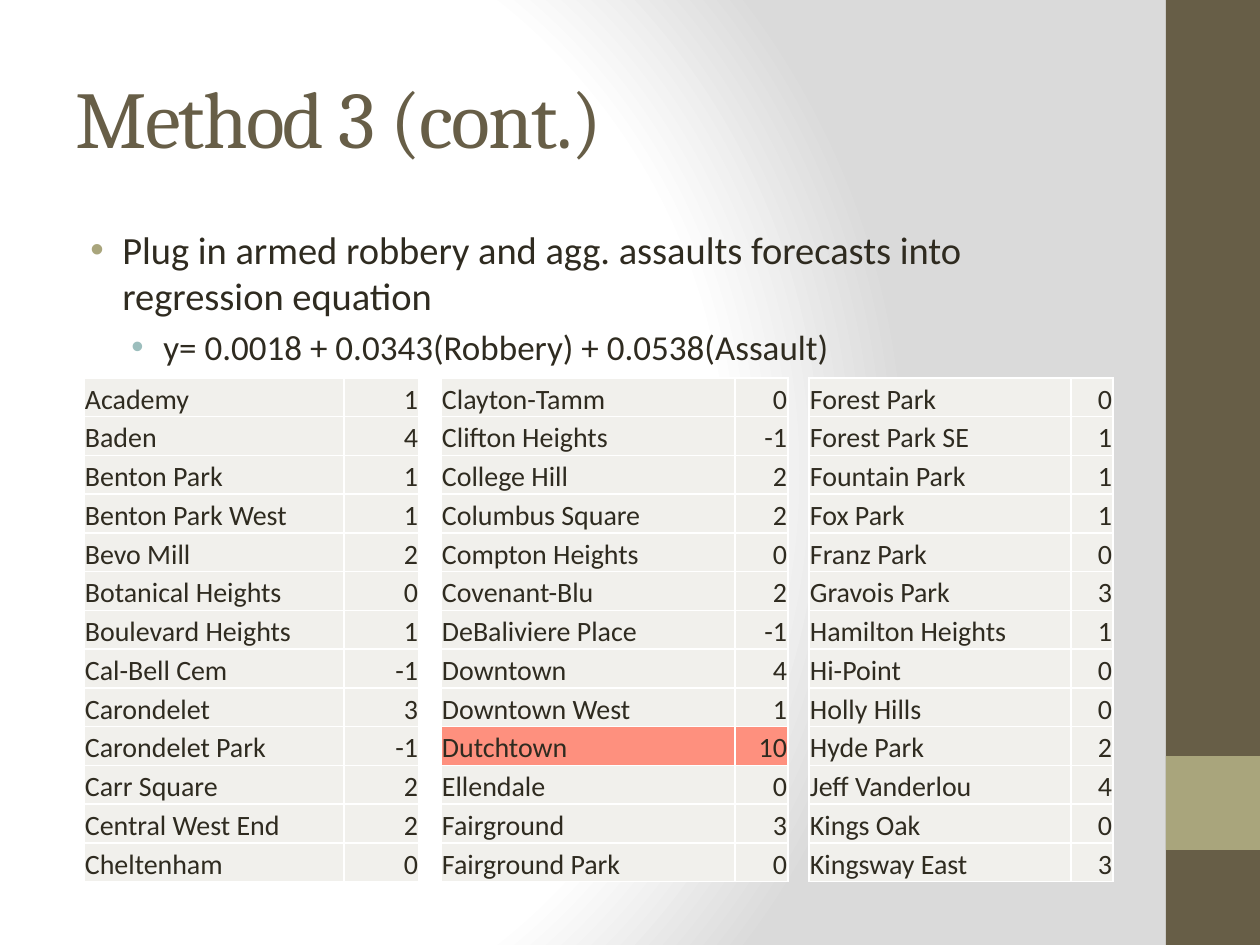
from dataclasses import dataclass

from pptx import Presentation
from pptx.dml.color import RGBColor
from pptx.enum.shapes import MSO_SHAPE
from pptx.enum.text import MSO_ANCHOR, PP_ALIGN
from pptx.oxml import parse_xml
from pptx.oxml.ns import nsdecls
from pptx.util import Emu, Pt

EMU_PER_PX = 914400 / 126
BROWN, OLIVE, TEAL, INK = "675E47", "A9A57C", "9CBEBD", "2F2B20"
CELL, HIGHLIGHT, WHITE = "F1F0EC", "FE907E", "FFFFFF"
HIGHLIGHTED = "Dutchtown"


@dataclass
class Band:
    top: int
    height: int
    color: str


@dataclass
class Bullet:
    text: str
    size: int
    indent: int
    color: str
    level: int


@dataclass
class Forecast:
    left: int
    widths: tuple[int, int]
    counts: dict[str, int]


BANDS = [Band(0, 945, BROWN), Band(756, 94, OLIVE)]
BULLETS = [
    Bullet("Plug in armed robbery and agg. assaults forecasts into regression equation", 22, 47, OLIVE, 0),
    Bullet("y= 0.0018 + 0.0343(Robbery) + 0.0538(Assault)", 20, 88, TEAL, 1),
]
FORECASTS = [
    Forecast(84, (260, 75), {
        "Academy": 1, "Baden": 4, "Benton Park": 1, "Benton Park West": 1, "Bevo Mill": 2,
        "Botanical Heights": 0, "Boulevard Heights": 1, "Cal-Bell Cem": -1, "Carondelet": 3,
        "Carondelet Park": -1, "Carr Square": 2, "Central West End": 2, "Cheltenham": 0,
    }),
    Forecast(441, (294, 53), {
        "Clayton-Tamm": 0, "Clifton Heights": -1, "College Hill": 2, "Columbus Square": 2,
        "Compton Heights": 0, "Covenant-Blu": 2, "DeBaliviere Place": -1, "Downtown": 4,
        "Downtown West": 1, "Dutchtown": 10, "Ellendale": 0, "Fairground": 3, "Fairground Park": 0,
    }),
    Forecast(809, (262, 42), {
        "Forest Park": 0, "Forest Park SE": 1, "Fountain Park": 1, "Fox Park": 1, "Franz Park": 0,
        "Gravois Park": 3, "Hamilton Heights": 1, "Hi-Point": 0, "Holly Hills": 0, "Hyde Park": 2,
        "Jeff Vanderlou": 4, "Kings Oak": 0, "Kingsway East": 3,
    }),
]


def px(length: int) -> Emu:
    return Emu(round(length * EMU_PER_PX))


def rgb(color: str) -> RGBColor:
    return RGBColor.from_string(color)


def write(paragraph, text: str, *, size: int, font: str = "Calibri", color: str = INK,
          align=PP_ALIGN.LEFT, spacing: int = 0) -> None:
    paragraph.alignment = align
    run = paragraph.add_run()
    run.text = text
    run.font.size = Pt(size)
    run.font.name = font
    run.font.color.rgb = rgb(color)
    if spacing:
        run.font._element.set("spc", str(spacing))


def paint_background(slide) -> None:
    stops = "".join(
        f'<a:gs pos="{position * 1000}"><a:srgbClr val="{color}"/></a:gs>'
        for position, color in ((0, WHITE), (75, WHITE), (100, "DADADA"))
    )
    slide.element.cSld.insert(0, parse_xml(
        f'<p:bg {nsdecls("p", "a")}><p:bgPr><a:gradFill rotWithShape="1"><a:gsLst>{stops}</a:gsLst>'
        '<a:path path="circle"><a:fillToRect l="20000" t="50000" r="100000" b="50000"/></a:path>'
        '</a:gradFill><a:effectLst/></p:bgPr></p:bg>'
    ))


def draw_band(slide, band: Band) -> None:
    stripe = slide.shapes.add_shape(MSO_SHAPE.RECTANGLE, px(1166), px(band.top), px(94), px(band.height))
    stripe.shadow.inherit = False
    stripe.fill.solid()
    stripe.fill.fore_color.rgb = rgb(band.color)
    stripe.line.fill.background()


def add_frame(slide, top: int, height: int, anchor):
    frame = slide.shapes.add_textbox(px(63), px(top), px(1050), px(height)).text_frame
    frame.word_wrap = True
    frame.vertical_anchor = anchor
    return frame


def write_bullet(paragraph, bullet: Bullet) -> None:
    write(paragraph, bullet.text, size=bullet.size)
    paragraph.level = bullet.level
    paragraph.space_before = Pt(bullet.size * 0.2)
    properties = paragraph._p.get_or_add_pPr()
    properties.set("marL", str(px(bullet.indent)))
    properties.set("indent", str(px(-32)))
    for mark in (f'<a:buClr {nsdecls("a")}><a:srgbClr val="{bullet.color}"/></a:buClr>',
                 f'<a:buFont {nsdecls("a")} typeface="Arial"/>',
                 f'<a:buChar {nsdecls("a")} char="•"/>'):
        properties.append(parse_xml(mark))


def fill_cell(cell, text: str, align, color: str) -> None:
    cell.margin_left = cell.margin_right = cell.margin_top = px(1)
    cell.margin_bottom = 0
    cell.vertical_anchor = MSO_ANCHOR.BOTTOM
    cell.fill.solid()
    cell.fill.fore_color.rgb = rgb(color)
    write(cell.text_frame.paragraphs[0], text, size=16, align=align)
    for position, side in enumerate("LRTB"):
        cell._tc.get_or_add_tcPr().insert(position, parse_xml(
            f'<a:ln{side} {nsdecls("a")} w="{Pt(1)}"><a:solidFill><a:srgbClr val="{WHITE}"/>'
            f'</a:solidFill></a:ln{side}>'
        ))


def draw_forecast(slide, forecast: Forecast) -> None:
    table = slide.shapes.add_table(len(forecast.counts), 2, px(forecast.left), px(378),
                                   px(sum(forecast.widths)), px(504)).table
    table.first_row = table.horz_banding = False
    for column, width in zip(table.columns, forecast.widths):
        column.width = px(width)
    for row, (area, count) in zip(table.rows, forecast.counts.items()):
        color = HIGHLIGHT if area == HIGHLIGHTED else CELL
        fill_cell(row.cells[0], area, PP_ALIGN.LEFT, color)
        fill_cell(row.cells[1], str(count), PP_ALIGN.RIGHT, color)


def main() -> None:
    """Build the slide with the forecast by neighborhood."""
    deck = Presentation()
    deck.slide_width, deck.slide_height = px(1260), px(945)
    slide = deck.slides.add_slide(deck.slide_layouts[6])
    paint_background(slide)
    for band in BANDS:
        draw_band(slide, band)
    title = add_frame(slide, 38, 157, MSO_ANCHOR.MIDDLE)
    write(title.paragraphs[0], "Method 3 (cont.)", size=46, font="Cambria", color=BROWN, spacing=-100)
    body = add_frame(slide, 220, 662, MSO_ANCHOR.TOP)
    body.add_paragraph()
    for paragraph, bullet in zip(body.paragraphs, BULLETS):
        write_bullet(paragraph, bullet)
    for forecast in FORECASTS:
        draw_forecast(slide, forecast)
    deck.save("out.pptx")


if __name__ == "__main__":
    main()
